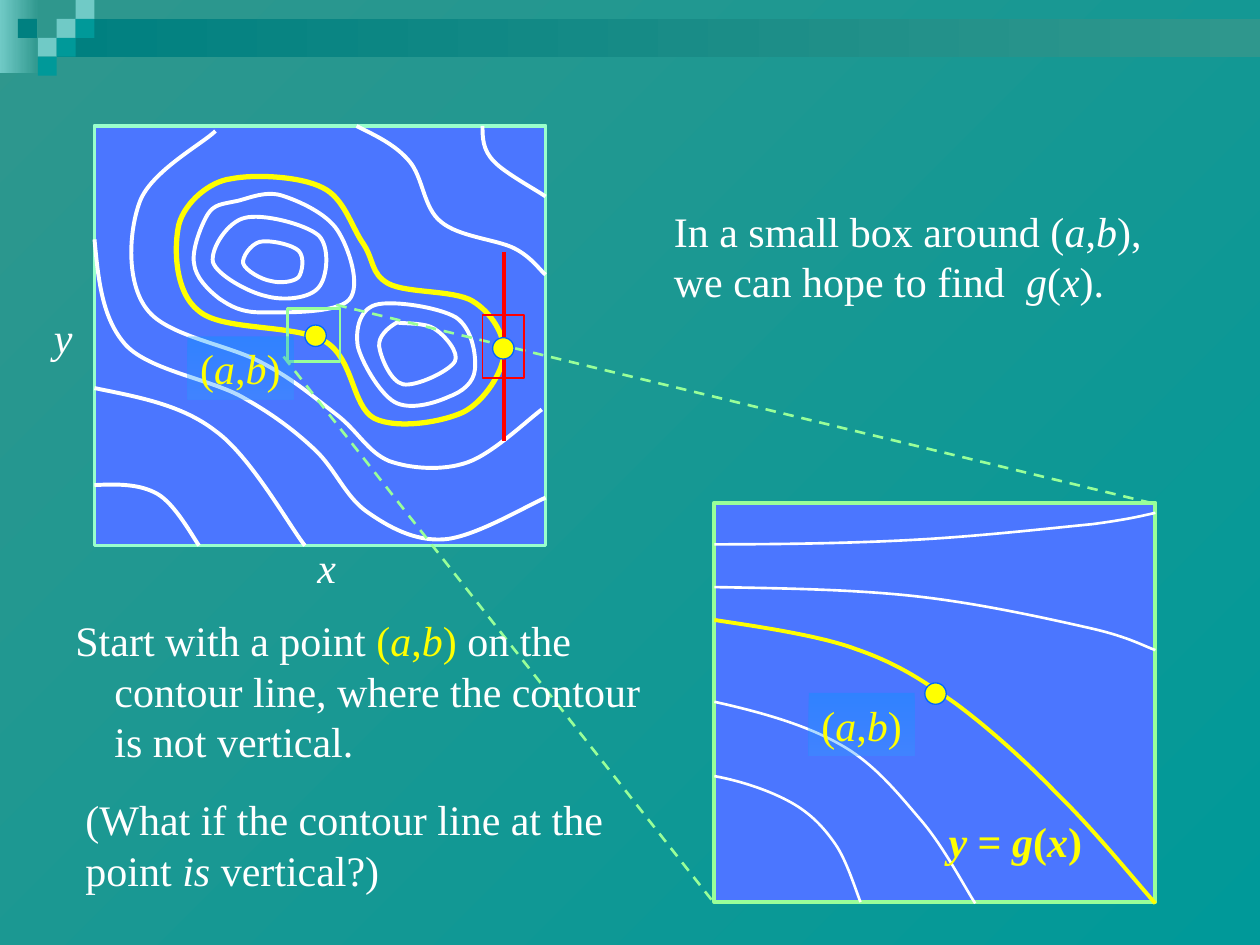
from pptx import Presentation, util as u
from pptx.dml.color import RGBColor
from pptx.enum import dml, shapes, text
from pptx.oxml.ns import qn
from lxml import etree

THEME = dict(
    font="Times New Roman", size=24, white="FFFFFF", yellow="FFFF00", red="FF0000",
    blue="4B76FF", mint="99FFCC", green="99FF99", ring="0066FF",
    sea="2F978D", teal="009999", dark="008080", pale="70CAC6",
    glass=("0099FF", "2E9CFF"), thin=0.75, fine=1.5, mid=2.25, bold=3,
)

# Lengths below are in inches; a box is left, top, width, height.
BANDS = [((0, 0, 0.31, 0.58), "pale", "sea"), ((0.45, 0.15, 9.55, 0.3), "dark", "sea")]
STEP = 0.15
TILES = [(3, 1, "pale"), (4, 0, "pale"), (4, 1, "teal"), (2, 2, "pale"),
         (0.95, 1, "dark"), (3, 2, "teal"), (2, 3, "teal")]

# A curve is its start point, then two control points and an end point per row.
MAP = (0.75, 1, 3.58, 3.33)
PEAKS = [
    [1.94, 1.73, 1.81, 1.76, 1.67, 1.97, 1.69, 2.08, 1.72, 2.18, 1.97, 2.32, 2.11, 2.35,
     2.25, 2.39, 2.46, 2.37, 2.53, 2.28, 2.6, 2.2, 2.62, 1.96, 2.53, 1.87,
     2.43, 1.78, 2.08, 1.69, 1.94, 1.73],
    [3.15, 2.56, 3.08, 2.6, 3, 2.67, 3.01, 2.75, 3.02, 2.83, 3.1, 3.03, 3.2, 3.05,
     3.3, 3.07, 3.56, 2.95, 3.61, 2.87, 3.65, 2.8, 3.53, 2.66, 3.45, 2.61,
     3.38, 2.56, 3.21, 2.57, 3.15, 2.56],
    [1.86, 1.6, 1.77, 1.62, 1.7, 1.62, 1.65, 1.7, 1.6, 1.78, 1.52, 1.98, 1.54, 2.09,
     1.55, 2.2, 1.65, 2.3, 1.74, 2.37, 1.83, 2.43, 1.91, 2.48, 2.08, 2.48,
     2.25, 2.48, 2.67, 2.49, 2.77, 2.38, 2.87, 2.27, 2.77, 1.97, 2.68, 1.83,
     2.59, 1.69, 2.36, 1.59, 2.23, 1.55, 2.09, 1.51, 1.94, 1.59, 1.86, 1.6],
    [2.98, 2.42, 2.85, 2.46, 2.82, 2.62, 2.84, 2.75, 2.87, 2.87, 3.01, 3.12, 3.13, 3.19,
     3.25, 3.26, 3.45, 3.2, 3.56, 3.15, 3.67, 3.11, 3.76, 3.04, 3.77, 2.93,
     3.78, 2.82, 3.75, 2.61, 3.62, 2.52, 3.49, 2.44, 3.11, 2.38, 2.98, 2.42],
    [2.06, 1.92, 1.99, 1.94, 1.92, 2.04, 1.93, 2.09, 1.95, 2.15, 2.08, 2.22, 2.15, 2.23,
     2.22, 2.25, 2.33, 2.24, 2.37, 2.2, 2.4, 2.16, 2.42, 2.04, 2.37, 1.99,
     2.32, 1.94, 2.13, 1.9, 2.06, 1.92],
]
LEVEL = [
    1.83, 1.42, 2.02, 1.38, 2.39, 1.4, 2.56, 1.49, 2.73, 1.57, 2.79, 1.8, 2.88, 1.93,
    2.97, 2.06, 2.94, 2.17, 3.08, 2.25, 3.23, 2.33, 3.6, 2.3, 3.75, 2.39,
    3.9, 2.48, 4.01, 2.66, 4, 2.81, 3.99, 2.95, 3.85, 3.18, 3.68, 3.27,
    3.51, 3.35, 3.15, 3.41, 2.97, 3.32, 2.79, 3.22, 2.81, 2.85, 2.58, 2.71,
    2.34, 2.57, 1.77, 2.63, 1.58, 2.47, 1.38, 2.32, 1.38, 1.95, 1.42, 1.78,
    1.47, 1.6, 1.67, 1.44, 1.83, 1.42]
SLOPES = [
    [0.75, 3.08, 1.09, 3.15, 1.44, 3.21, 1.71, 3.42, 1.99, 3.62, 2.3, 4.18, 2.42, 4.33],
    [1.71, 1.04, 1.61, 1.14, 1.2, 1.36, 1.11, 1.6, 1.02, 1.84, 1, 2.25, 1.17, 2.46,
     1.33, 2.67, 1.83, 2.74, 2.08, 2.88, 2.33, 3.01, 2.5, 3.16, 2.67, 3.29,
     2.84, 3.42, 2.92, 3.59, 3.09, 3.66, 3.26, 3.72, 3.51, 3.74, 3.71, 3.67,
     3.91, 3.6, 4.18, 3.34, 4.3, 3.25],
    [2.83, 1, 2.99, 1.08, 3.14, 1.15, 3.25, 1.28, 3.36, 1.41, 3.36, 1.65, 3.5, 1.76,
     3.64, 1.88, 3.94, 1.9, 4.08, 1.97, 4.22, 2.04, 4.29, 2.15, 4.33, 2.18],
    [0.75, 3.85, 0.93, 3.84, 1.11, 3.84, 1.25, 3.92, 1.39, 4, 1.53, 4.26, 1.58, 4.33],
    [0.75, 1.9, 0.78, 2.22, 0.81, 2.53, 1, 2.74, 1.19, 2.94, 1.67, 3.01, 1.92, 3.15,
     2.17, 3.29, 2.34, 3.42, 2.5, 3.57, 2.66, 3.72, 2.74, 3.94, 2.91, 4.06,
     3.08, 4.18, 3.29, 4.3, 3.53, 4.28, 3.77, 4.26, 4.17, 4.02, 4.33, 3.95],
    [3.83, 1, 3.83, 1.09, 3.83, 1.19, 3.92, 1.28, 4, 1.37, 4.26, 1.51, 4.33, 1.56],
]
ZOOM = (5.67, 3.99, 3.5, 3.17)
NEAR = [
    [5.67, 4.66, 6.25, 4.67, 6.83, 4.68, 7.33, 4.74, 7.83, 4.8, 8.36, 4.92, 8.67, 4.99,
     8.97, 5.06, 9.08, 5.13, 9.17, 5.16],
    [5.67, 4.32, 6.25, 4.32, 6.83, 4.31, 7.33, 4.28, 7.83, 4.25, 8.36, 4.19, 8.67, 4.16,
     8.97, 4.12, 9.08, 4.09, 9.17, 4.07],
    [5.67, 5.57, 6.03, 5.65, 6.39, 5.75, 6.67, 5.91, 6.94, 6.06, 7.13, 6.3, 7.31, 6.51,
     7.49, 6.72, 7.65, 7.03, 7.74, 7.17],
    [5.67, 6.16, 5.89, 6.2, 6.12, 6.28, 6.28, 6.37, 6.44, 6.46, 6.54, 6.57, 6.63, 6.7,
     6.72, 6.83, 6.79, 7.06, 6.83, 7.16],
]
GRAPH = [5.67, 4.92, 5.85, 4.95, 6.47, 5.03, 6.79, 5.15, 7.11, 5.26, 7.31, 5.39, 7.58, 5.58,
         7.85, 5.78, 8.14, 6.04, 8.4, 6.31, 8.67, 6.57, 9.01, 6.99, 9.17, 7.17]
RAYS = [(2.25, 2.83, 5.67, 7.17), (2.67, 2.42, 9.17, 4)]
DOT = 0.17
POINTS = [((2.42, 2.58), (1.49, 2.67, 0.84, 0.5)), ((7.34, 5.42), (6.42, 5.5, 0.84, 0.5))]

# Run styles: i italic, b bold, y yellow.
PAIR = [("(", "y"), ("a", "yi"), (",", "y"), ("b", "yi"), (")", "y")]
AXES = [((2.42, 4.25, 0.35, 0.5), [("x", "i")]), ((0.33, 2.42, 0.35, 0.5), [("y", "i")])]
RULE = ((7.43, 6.42, 1.26, 0.5), [("y", "ybi"), (" = ", "yb"), ("g", "ybi"), ("(", "yb"),
                                  ("x", "ybi"), (")", "yb")])
START = ((0.5, 4.83, 4.75, 1.3), [("Start with a point ", ""), *PAIR,
         (" on the contour line, where the contour is not vertical.", "")], 0.31)
HOPE = ((5.25, 1.58, 4.35, 0.9), [("In a small box around (", ""), ("a", "i"), (",", ""),
        ("b", "i"), ("), we can hope to find  ", ""), ("g", "i"), ("(", ""), ("x", "i"), (").", "")])
ASK = ((0.58, 6.25, 4.58, 0.9), [("(What if the contour line at the point ", ""),
                                 ("is", "i"), (" vertical?)", "")])


def size(*vals):
    return [u.Cm(v * 2.54) for v in vals]


def rgb(name):
    return RGBColor.from_string(THEME.get(name, name))


def blend(fill, first, last, angle):
    """Two-stop gradient; the angle runs clockwise."""
    fill.gradient()
    fill.gradient_angle = -angle % 360
    for stop, name in zip(fill.gradient_stops, (first, last)):
        stop.color.rgb = rgb(name)


def stroke(line, name, wide):
    line.color.rgb = rgb(name)
    line.width = u.Pt(THEME[wide])


def block(box, fill=None, edge=None, wide="thin", kind=shapes.MSO_SHAPE.RECTANGLE):
    shape = page.add_shape(kind, *size(*box))
    shape.shadow.inherit = False
    if fill:
        shape.fill.solid()
        shape.fill.fore_color.rgb = rgb(fill)
    else:
        shape.fill.background()
    if edge:
        stroke(shape.line, edge, wide)
    else:
        shape.line.fill.background()
    return shape


def curve(nums, name, wide):
    """Freeform through the end points, bent by the control points."""
    flat = size(*nums)
    pts = list(zip(flat[::2], flat[1::2]))
    form = page.build_freeform(*pts[0], scale=1.0)
    form.add_line_segments(pts[3::3], close=pts[0] == pts[-1])
    shape = form.convert_to_shape()
    shape.shadow.inherit = False
    shape.fill.background()
    stroke(shape.line, name, wide)
    for i, leg in enumerate(list(shape._element.iter(qn("a:lnTo")))):
        bend = etree.Element(qn("a:cubicBezTo"))
        for x, y in pts[3 * i + 1:3 * i + 4]:
            etree.SubElement(bend, qn("a:pt"), x=str(x - shape.left), y=str(y - shape.top))
        leg.getparent().replace(leg, bend)


def link(ends, name, wide, dash=False):
    line = page.add_connector(shapes.MSO_CONNECTOR.STRAIGHT, *size(*ends))
    stroke(line.line, name, wide)
    if dash:
        line.line.dash_style = dml.MSO_LINE.DASH
    etree.SubElement(line._element.spPr, qn("a:effectLst"))


def write(shape, runs, wrap=False, hang=0):
    frame = shape.text_frame
    frame.word_wrap = wrap
    frame.auto_size = text.MSO_AUTO_SIZE.SHAPE_TO_FIT_TEXT
    frame.vertical_anchor = text.MSO_ANCHOR.TOP
    para = frame.paragraphs[0]
    para.alignment = text.PP_ALIGN.LEFT
    if hang:
        left, back = size(hang, -hang)
        props = para._p.get_or_add_pPr()
        props.set("marL", str(left))
        props.set("indent", str(back))
    for words, style in runs:
        run = para.add_run()
        run.text = words
        font = run.font
        font.name, font.size = THEME["font"], u.Pt(THEME["size"])
        font.italic, font.bold = "i" in style, "b" in style
        font.color.rgb = rgb("yellow" if "y" in style else "white")


def note(box, runs, hang=0, wrap=True):
    write(page.add_textbox(*size(*box)), runs, wrap, hang)


def dot(x, y):
    block((x, y, DOT, DOT), "yellow", "ring", kind=shapes.MSO_SHAPE.OVAL)


def label(box):
    shape = block(box)
    blend(shape.fill, *THEME["glass"], 90)
    for tint in shape._element.spPr.find(qn("a:gradFill")).iter(qn("a:srgbClr")):
        etree.SubElement(tint, qn("a:alpha"), val="35000")
    write(shape, PAIR)


deck = Presentation()
deck.slide_width, deck.slide_height = size(10, 7.5)
slide = deck.slides.add_slide(deck.slide_layouts[6])
page = slide.shapes
blend(slide.background.fill, "sea", "teal", 45)

for box, first, last in BANDS:
    blend(block(box).fill, first, last, 0)
for col, row, name in TILES:
    block((col * STEP, row * STEP, STEP, STEP), name)

block(MAP, "blue", "mint", "mid")
curve(LEVEL, "yellow", "bold")
for nums in PEAKS + SLOPES:
    curve(nums, "white", "mid")
for box, runs in AXES:
    note(box, runs, wrap=False)

block(ZOOM, "blue", "green", "mid")
for nums in NEAR:
    curve(nums, "white", "fine")
curve(GRAPH, "yellow", "mid")

block((2.28, 2.45, 0.42, 0.42), None, "green", "fine")
for ends in RAYS:
    link(ends, "green", "fine", dash=True)
for spot, box in POINTS:
    dot(*spot)
    label(box)

note(*RULE, wrap=False)
note(*START)
note(*HOPE)
link((4, 2, 4, 3.5), "red", "mid")
dot(3.91, 2.68)
block((3.83, 2.5, 0.33, 0.5), None, "red")
note(*ASK)
deck.save("out.pptx")
